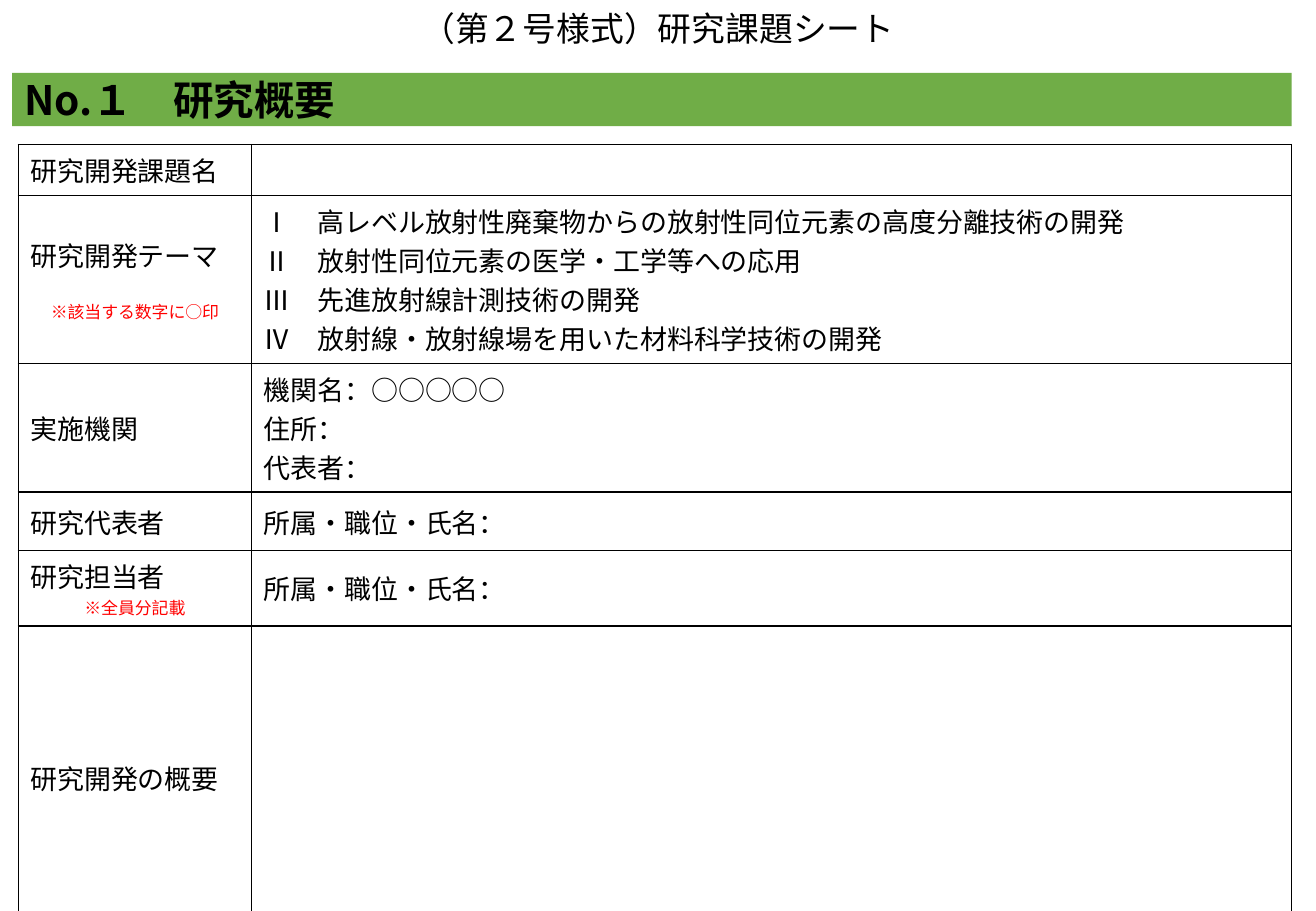
from dataclasses import dataclass

from lxml import etree
from pptx import Presentation
from pptx.dml.color import RGBColor
from pptx.enum import shapes, text
from pptx.oxml import ns
from pptx.util import Inches, Pt

FONT = "Noto Sans CJK JP"
BLACK = RGBColor(0x00, 0x00, 0x00)
RED = RGBColor(0xFF, 0x00, 0x00)
GREEN = RGBColor(0x70, 0xAD, 0x47)
LEFT, CENTER, JUSTIFY = (
    text.PP_ALIGN.LEFT, text.PP_ALIGN.CENTER, text.PP_ALIGN.JUSTIFY)
MIDDLE = text.MSO_ANCHOR.MIDDLE


@dataclass(frozen=True)
class FormRow:
    height: float
    label: str
    lines: tuple[str, ...] = ()
    note: str = ""
    note_gap: float = 0


ROWS = (
    FormRow(0.42, "研究開発課題名"),
    FormRow(1.38, "研究開発テーマ", (
        "Ⅰ　高レベル放射性廃棄物からの放射性同位元素の高度分離技術の開発",
        "Ⅱ　放射性同位元素の医学・工学等への応用",
        "Ⅲ　先進放射線計測技術の開発",
        "Ⅳ　放射線・放射線場を用いた材料科学技術の開発",
    ), "※該当する数字に○印", 14.5),
    FormRow(1.06, "実施機関", ("機関名：○○○○○", "住所：", "代表者：")),
    FormRow(0.48, "研究代表者", ("所属・職位・氏名：",)),
    FormRow(0.62, "研究担当者", ("所属・職位・氏名：",), "※全員分記載"),
    FormRow(2.5, "研究開発の概要"),
)
COLUMNS = (1.92, 8.56)


def write(tf, content: str, *, size: float = 16, color: RGBColor = BLACK,
          bold: bool = False, align=LEFT, before: float = 0) -> None:
    p = tf.paragraphs[-1]
    if p.runs:
        p = tf.add_paragraph()
    p.alignment = align
    p.space_before = Pt(before)
    r = p.add_run()
    r.text = content
    r.font.size = Pt(size)
    r.font.bold = bold
    r.font.color.rgb = color
    r.font.name = FONT
    ea = etree.SubElement(r.font._element, ns.qn("a:ea"))
    ea.set("typeface", FONT)


def format_cell(cell) -> None:
    cell.vertical_anchor = MIDDLE
    cell.fill.background()
    tc_pr = cell._tc.get_or_add_tcPr()
    for i, side in enumerate(("lnL", "lnR", "lnT", "lnB")):
        ln = etree.Element(ns.qn(f"a:{side}"), w=str(Pt(1)))
        fill = etree.SubElement(ln, ns.qn("a:solidFill"))
        etree.SubElement(fill, ns.qn("a:srgbClr"), val=str(BLACK))
        tc_pr.insert(i, ln)


def add_title(slide) -> None:
    sp = slide.shapes.title
    sp.left, sp.top = Inches(0), Inches(0.01)
    sp.width, sp.height = Inches(10.83), Inches(0.44)
    tf = sp.text_frame
    tf.auto_size = text.MSO_AUTO_SIZE.NONE
    tf.vertical_anchor = MIDDLE
    write(tf, "（第２号様式）研究課題シート", size=20, align=CENTER)


def add_heading(slide) -> None:
    sp = slide.shapes.add_shape(
        shapes.MSO_SHAPE.RECTANGLE,
        Inches(0.1), Inches(0.6), Inches(10.53), Inches(0.44))
    sp.shadow.inherit = False
    sp.fill.solid()
    sp.fill.fore_color.rgb = GREEN
    sp.line.fill.background()
    sp.text_frame.vertical_anchor = MIDDLE
    write(sp.text_frame, "No.１　研究概要", size=24, bold=True)


def add_form(slide) -> None:
    table = slide.shapes.add_table(
        len(ROWS), len(COLUMNS), Inches(0.15), Inches(1.19),
        Inches(sum(COLUMNS)), Inches(sum(row.height for row in ROWS))).table
    table.first_row = table.horz_banding = False
    for column, width in zip(table.columns, COLUMNS):
        column.width = Inches(width)
    for i, row in enumerate(ROWS):
        table.rows[i].height = Inches(row.height)
        label, entry = table.cell(i, 0), table.cell(i, 1)
        format_cell(label)
        format_cell(entry)
        write(label.text_frame, row.label, align=JUSTIFY)
        if row.note:
            write(label.text_frame, row.note, size=10, color=RED,
                  align=CENTER, before=row.note_gap)
        for line in row.lines:
            write(entry.text_frame, line)


def main() -> None:
    prs = Presentation()
    prs.slide_width, prs.slide_height = Inches(10.83), Inches(7.5)
    slide = prs.slides.add_slide(prs.slide_layouts[5])
    add_heading(slide)
    add_form(slide)
    add_title(slide)
    prs.save("out.pptx")


if __name__ == "__main__":
    main()
